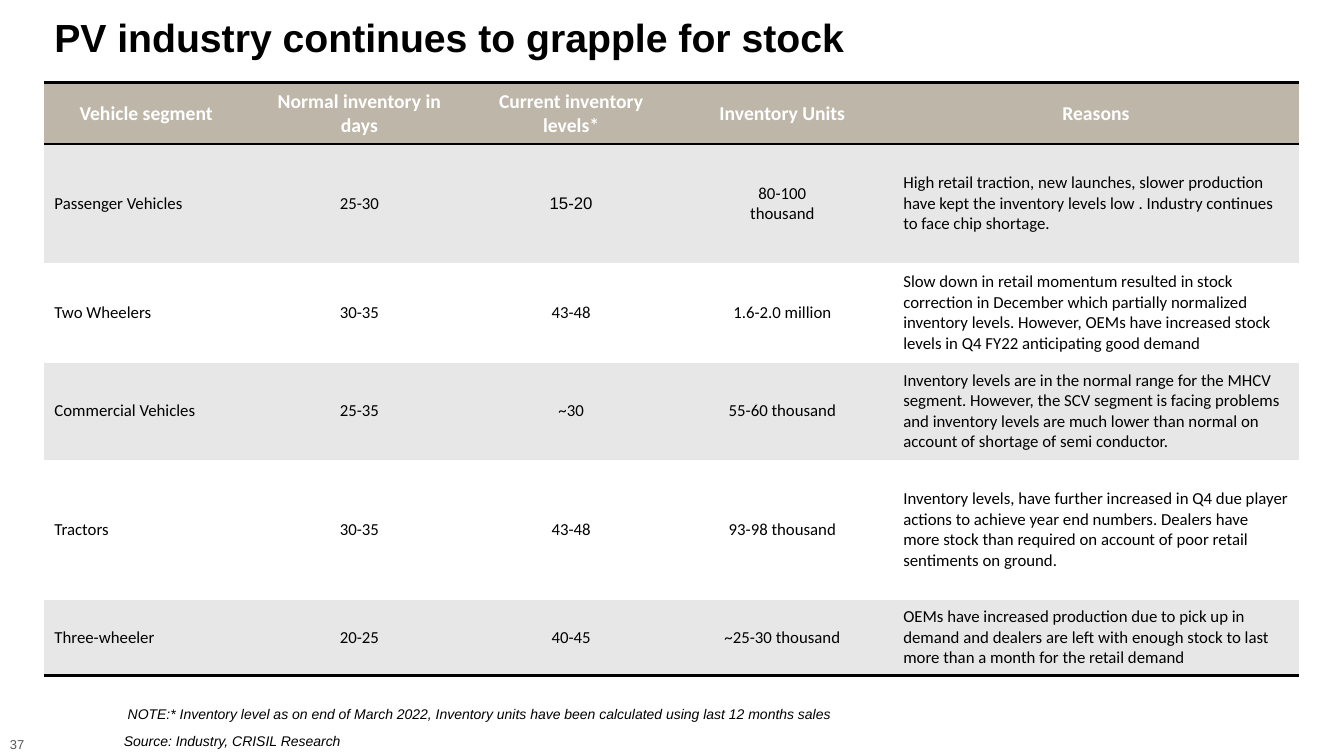
from lxml.etree import SubElement
from pptx import Presentation
from pptx.dml.color import RGBColor
from pptx.enum.text import MSO_ANCHOR, PP_ALIGN
from pptx.oxml import parse_xml
from pptx.oxml.ns import nsdecls, qn
from pptx.util import Inches, Pt

TITLE = "PV industry continues to grapple for stock"
HEADER = ["Vehicle segment", "Normal inventory in days", "Current inventory levels*",
          "Inventory Units", "Reasons"]
SEGMENTS = [
    ["Passenger Vehicles", "25-30", "15-20", "80-100\nthousand",
     "High retail traction, new launches, slower production have kept the inventory "
     "levels low . Industry continues to face chip shortage."],
    ["Two Wheelers", "30-35", "43-48", "1.6-2.0 million",
     "Slow down in retail momentum resulted in stock correction in December which "
     "partially normalized inventory levels. However, OEMs have increased stock levels "
     "in Q4 FY22 anticipating good demand"],
    ["Commercial Vehicles", "25-35", "~30", "55-60 thousand",
     "Inventory levels are in the normal range for the MHCV segment. However, the SCV "
     "segment is facing problems and inventory levels are much lower than normal on "
     "account of shortage of semi conductor."],
    ["Tractors", "30-35", "43-48", "93-98 thousand",
     "Inventory levels, have further increased in Q4 due player actions to achieve year "
     "end numbers. Dealers have more stock than required on account of poor retail "
     "sentiments on ground."],
    ["Three-wheeler", "20-25", "40-45", "~25-30 thousand",
     "OEMs have increased production due to pick up in demand and dealers are left with "
     "enough stock to last more than a month for the retail demand"],
]
NOTE = (" NOTE:* Inventory level as on end of March 2022, Inventory units have been "
        "calculated using last 12 months sales")
SOURCE = "Source: Industry, CRISIL Research"
PAGE = "37"

COL_WIDTHS = [2.02, 2.21, 1.99, 2.2, 4.02]
ROW_HEIGHTS = [0.61, 1.18, 0.99, 0.96, 1.39, 0.75]
BLACK, WHITE, TAN, GREY, PAGE_GREY = "000000", "FFFFFF", "BEB7A9", "E7E7E7", "595959"
NO_GRID_STYLE = "{2D5ABB26-0587-4C30-8999-92F81FD0307C}"


def color(value):
    """Turn a hex string into a colour."""
    return RGBColor.from_string(value)


def write(tf, text, size=12, font="Calibri", fill=BLACK, bold=False, italic=False,
          align=PP_ALIGN.LEFT, spacing=None):
    """Fill a text frame, one paragraph per line of text."""
    for i, line in enumerate(text.split("\n")):
        p = tf.add_paragraph() if i else tf.paragraphs[0]
        p.alignment = align
        if spacing:
            p.line_spacing = spacing
        r = p.add_run()
        r.text = line
        r.font.size, r.font.name = Pt(size), font
        r.font.bold, r.font.italic = bold, italic
        r.font.color.rgb = color(fill)


def add_text(s, box, text, anchor=MSO_ANCHOR.TOP, wrap=True, **style):
    """Add a text box at left, top, width, height in inches."""
    tf = s.shapes.add_textbox(*map(Inches, box)).text_frame
    tf.word_wrap, tf.vertical_anchor = wrap, anchor
    write(tf, text, **style)


def add_rules(cell, *sides):
    """Draw black 2 pt rules on the given sides of a cell."""
    tcPr = cell._tc.get_or_add_tcPr()
    for i, side in enumerate(sides):
        ln = parse_xml(f'<a:{side} {nsdecls("a")} w="{Pt(2)}"/>')
        solid = SubElement(ln, qn("a:solidFill"))
        SubElement(solid, qn("a:srgbClr"), val=BLACK)
        tcPr.insert(i, ln)


def add_inventory_table(s):
    """Add the inventory table with its header and grey and white rows."""
    rows = [HEADER] + SEGMENTS
    frame = s.shapes.add_table(len(rows), len(HEADER), Inches(0.44), Inches(0.82),
                               Inches(sum(COL_WIDTHS)), Inches(sum(ROW_HEIGHTS)))
    table = frame.table
    table.horz_banding = table.first_row = False
    table._tbl.tblPr.find(qn("a:tableStyleId")).text = NO_GRID_STYLE
    for column, width in zip(table.columns, COL_WIDTHS):
        column.width = Inches(width)
    for i, (row, height) in enumerate(zip(rows, ROW_HEIGHTS)):
        table.rows[i].height = Inches(height)
        for j, text in enumerate(row):
            cell = table.cell(i, j)
            cell.vertical_anchor = MSO_ANCHOR.MIDDLE
            cell.fill.solid()
            cell.fill.fore_color.rgb = color(TAN if i == 0 else GREY if i % 2 else WHITE)
            if i == 0:
                write(cell.text_frame, text, size=14, fill=WHITE, bold=True,
                      align=PP_ALIGN.CENTER)
                add_rules(cell, "lnT", "lnB")
                continue
            edge = j in (0, len(row) - 1)
            write(cell.text_frame, text, font="Arial" if text == "15-20" else "Calibri",
                  align=PP_ALIGN.LEFT if edge else PP_ALIGN.CENTER)
            if i == len(rows) - 1:
                add_rules(cell, "lnB")


def main():
    """Build the slide and save it."""
    prs = Presentation()
    prs.slide_width, prs.slide_height = Inches(13.33), Inches(7.5)
    s = prs.slides.add_slide(prs.slide_layouts[6])
    add_text(s, (0, 7.26, 0.36, 0.26), PAGE, wrap=False, size=9.2, font="Arial",
             fill=PAGE_GREY)
    add_text(s, (0.44, -0.09, 12.75, 0.97), TITLE, anchor=MSO_ANCHOR.MIDDLE, size=28,
             font="Arial", bold=True, spacing=0.9)
    add_inventory_table(s)
    for text, top, width in ((SOURCE, 7.22, 5.58), (NOTE, 6.95, 7.62)):
        add_text(s, (1.13, top, width, 0.27), text, size=10, font="Arial", italic=True)
    prs.save("out.pptx")


if __name__ == "__main__":
    main()
